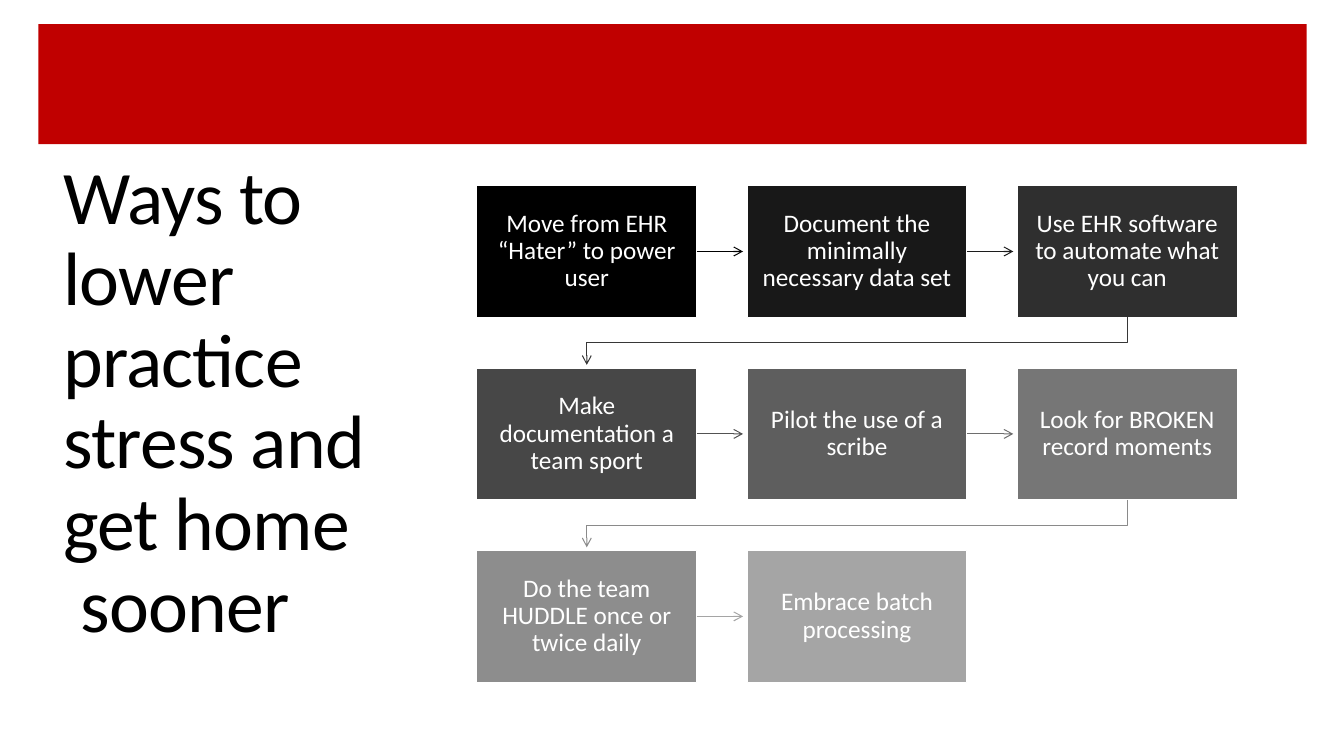
"""Builds a slide with eight linked steps for lower practice stress."""
from dataclasses import dataclass
from lxml.etree import SubElement
from pptx import Presentation
from pptx.dml.color import RGBColor
from pptx.enum.shapes import MSO_CONNECTOR, MSO_SHAPE
from pptx.enum.text import MSO_ANCHOR, MSO_AUTO_SIZE, PP_ALIGN
from pptx.oxml.ns import qn
from pptx.util import Inches, Pt


@dataclass
class Theme:
    font: str = "Calibri"
    title: int = 54
    step: int = 18
    red: RGBColor = RGBColor(192, 0, 0)
    black: RGBColor = RGBColor(0, 0, 0)
    white: RGBColor = RGBColor(255, 255, 255)
    grey: int = 165


theme = Theme()


def write(frame, text, size, color, align=PP_ALIGN.LEFT, inset=0.1, track=0, indent=0):
    frame.word_wrap = True
    frame.auto_size = MSO_AUTO_SIZE.NONE
    frame.vertical_anchor = MSO_ANCHOR.MIDDLE
    frame.margin_left = frame.margin_right = Inches(inset)
    frame.text = text
    for para in frame.paragraphs:
        para.alignment = align
        para.line_spacing = 0.9
        para.space_before = Pt(0)
        run = para.runs[0]
        run.font.name = theme.font
        run.font.size = Pt(size)
        run.font.color.rgb = color
        if track:
            run.font._element.set("spc", str(track))
    if indent:
        para._p.get_or_add_pPr().set("marL", str(Inches(indent)))


def point(link, shade):
    link.line.color.rgb = RGBColor(shade, shade, shade)
    link.line.width = Pt(0.75)
    SubElement(link.line._get_or_add_ln(), qn("a:tailEnd"), type="arrow")


deck = Presentation()
deck.slide_width, deck.slide_height = Inches(13.33), Inches(7.5)
slide = deck.slides.add_slide(deck.slide_layouts[5])
shapes = slide.shapes

title = shapes.title
title.left, title.top = Inches(0.53), Inches(0.95)
title.width, title.height = Inches(3.74), Inches(6.11)
write(title.text_frame, "Ways to lower practice stress and get home\nsooner",
      theme.title, theme.black, track=-60, indent=0.17)

band = shapes.add_shape(MSO_SHAPE.RECTANGLE, Inches(0.38), Inches(0.24),
                        Inches(12.58), Inches(1.19))
band.shadow.inherit = False
band.fill.solid()
band.fill.fore_color.rgb = theme.red
band.line.fill.background()
title.element.addprevious(band.element)

steps = [
    "Move from EHR “Hater” to power user",
    "Document the minimally necessary data set",
    "Use EHR software to automate what you can",
    "Make documentation a team sport",
    "Pilot the use of a scribe",
    "Look for BROKEN record moments",
    "Do the team HUDDLE once or twice daily",
    "Embrace batch processing",
]
cols, left, top = 3, 4.73, 1.84
wide, high = 2.18, 1.31
across, down = 2.68, 1.81
last = len(steps) - 1

for i, step in enumerate(steps):
    row, col = divmod(i, cols)
    x, y = left + col * across, top + row * down
    box = shapes.add_shape(MSO_SHAPE.RECTANGLE, Inches(x), Inches(y),
                           Inches(wide), Inches(high))
    box.shadow.inherit = False
    shade = round(theme.grey * i / last)
    box.fill.solid()
    box.fill.fore_color.rgb = RGBColor(shade, shade, shade)
    box.line.color.rgb = theme.white
    box.line.width = Pt(0.85)
    write(box.text_frame, step, theme.step, theme.white,
          align=PP_ALIGN.CENTER, inset=0.11)
    if i == last:
        break
    tone = round(theme.grey * i / (last - 1))
    if col < cols - 1:
        mid = Inches(y + high / 2)
        link = shapes.add_connector(MSO_CONNECTOR.STRAIGHT, Inches(x + wide), mid,
                                    Inches(x + across - 0.04), mid)
        link.begin_connect(box, 3)
        SubElement(link._element.spPr, qn("a:effectLst"))
    else:
        start, end = x + wide / 2, left + wide / 2
        base = y + high
        turn = base + (down - high) / 2
        pen = shapes.build_freeform(Inches(start), Inches(base))
        pen.add_line_segments([(Inches(start), Inches(turn)), (Inches(end), Inches(turn)),
                               (Inches(end), Inches(y + down - 0.03))], close=False)
        link = pen.convert_to_shape()
        link.shadow.inherit = False
        link.fill.background()
    point(link, tone)

deck.save("out.pptx")
